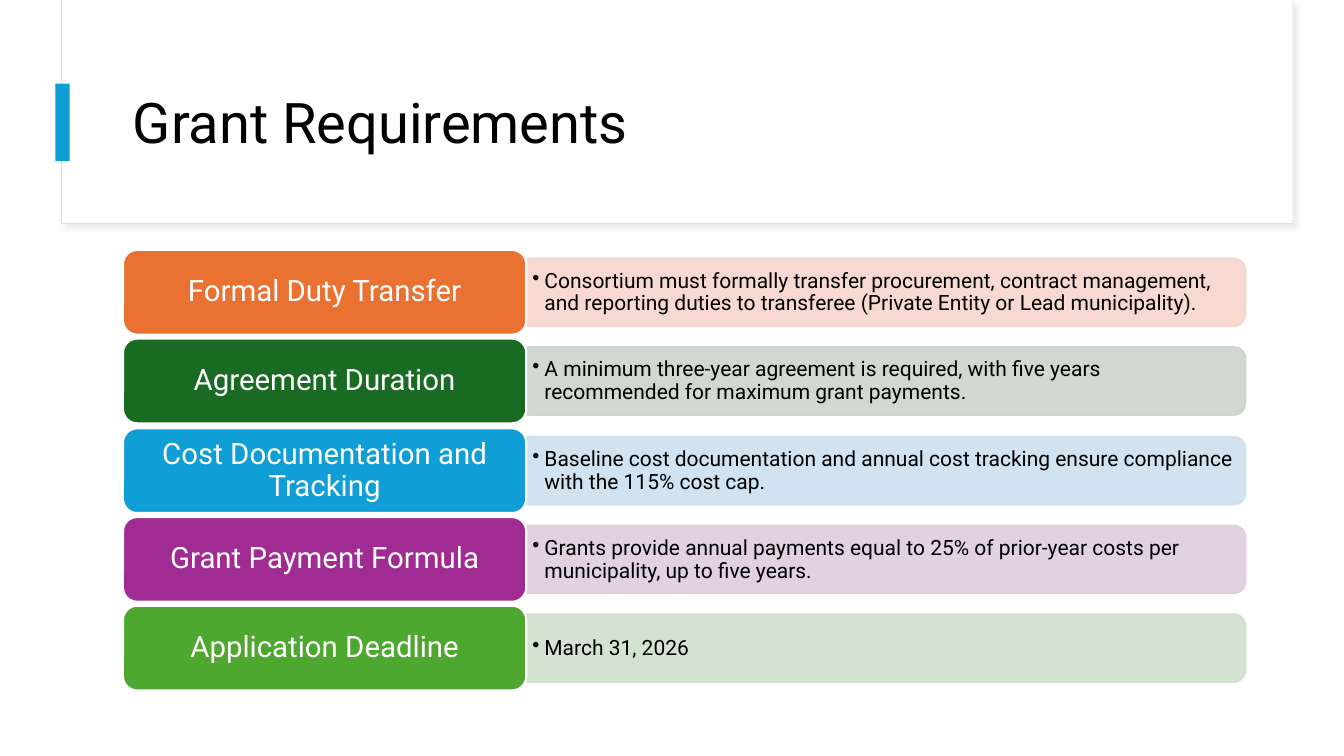
from lxml.etree import SubElement
from pptx import Presentation
from pptx.dml.color import RGBColor
from pptx.enum.shapes import MSO_SHAPE
from pptx.enum.text import MSO_ANCHOR, PP_ALIGN
from pptx.oxml.ns import qn
from pptx.util import Emu, Pt

FONT = "Roboto"
ROW_TOP, ROW_PITCH, ROW_HEIGHT = 248, 88.3, 84
LABEL_LEFT, LABEL_WIDTH = 122, 400
BAND_LEFT, BAND_WIDTH, BAND_HEIGHT = 523, 712, 67

REQUIREMENTS = [
    ("Formal Duty Transfer", "E97132", "F7D5CE",
     "Consortium must formally transfer procurement, contract management, "
     "and reporting duties to transferee (Private Entity or Lead municipality)."),
    ("Agreement Duration", "196B24", "CCD4CD",
     "A minimum three-year agreement is required, with five years "
     "recommended for maximum grant payments."),
    ("Cost Documentation and Tracking", "0F9ED5", "CCDFEF",
     "Baseline cost documentation and annual cost tracking ensure compliance "
     "with the 115% cost cap."),
    ("Grant Payment Formula", "A02B93", "DFCDDC",
     "Grants provide annual payments equal to 25% of prior-year costs per "
     "municipality, up to five years."),
    ("Application Deadline", "4EA72E", "D0E1CD", "March 31, 2026"),
]


def px(length):
    """Turn px, at 100 to the inch, into EMU."""
    return Emu(round(length * 9144))


def color(code):
    """Turn a hex string into a colour."""
    return RGBColor.from_string(code)


def add_block(slide, kind, box, fill, line=None, line_width=1.5):
    """Add a filled preset shape without a shadow."""
    shape = slide.shapes.add_shape(kind, *map(px, box))
    shape.shadow.inherit = False
    shape.fill.solid()
    shape.fill.fore_color.rgb = color(fill)
    if line:
        shape.line.color.rgb = color(line)
        shape.line.width = Pt(line_width)
    else:
        shape.line.fill.background()
    return shape


def write_text(shape, text, size, code, insets, align=PP_ALIGN.LEFT, bullet=False):
    """Write one paragraph, vertically centred, into a shape."""
    frame = shape.text_frame
    frame.word_wrap = True
    frame.vertical_anchor = MSO_ANCHOR.MIDDLE
    frame.margin_left = frame.margin_right = px(insets[0])
    frame.margin_top = frame.margin_bottom = px(insets[1])
    paragraph = frame.paragraphs[0]
    paragraph.alignment = align
    paragraph.line_spacing = 0.9
    if bullet:
        properties = paragraph._p.get_or_add_pPr()
        properties.set("marL", str(px(12)))
        properties.set("indent", str(px(-12)))
        SubElement(properties, qn("a:buChar"), char="•")
    run = paragraph.add_run()
    run.text = text
    run.font.name = FONT
    run.font.size = Pt(size)
    run.font.color.rgb = color(code)


def add_soft_shadow(shape):
    """Give a shape a faint shadow towards the lower right."""
    effects = shape.element.spPr.find(qn("a:effectLst"))
    shadow = SubElement(effects, qn("a:outerShdw"), blurRad=str(Pt(4)),
                        dist=str(Pt(3)), dir="2700000", algn="tl", rotWithShape="0")
    tint = SubElement(shadow, qn("a:srgbClr"), val="D9D9D9")
    SubElement(tint, qn("a:alpha"), val="50000")


def set_opacity(shape, percent):
    """Set the opacity of the fill and line of a shape."""
    for tint in shape.element.spPr.iter(qn("a:srgbClr")):
        SubElement(tint, qn("a:alpha"), val=str(percent * 1000))


def add_header(slide, title):
    """Add the title panel with its accent bar."""
    panel = add_block(slide, MSO_SHAPE.RECTANGLE, (61, 1, 1221, 221),
                      "FFFFFF", "DEDEDE", 0.75)
    add_soft_shadow(panel)
    add_block(slide, MSO_SHAPE.RECTANGLE, (62, 0, 1220, 220), "FFFFFF")
    heading = slide.shapes.add_textbox(px(122), px(60), px(1112), px(129))
    write_text(heading, title, 40, "000000", (10, 5))
    add_block(slide, MSO_SHAPE.RECTANGLE, (55, 83, 14, 77), "0F9ED5")


def add_requirement(slide, top, label, label_fill, band_fill, detail):
    """Add one row: a label block and a tinted band with its detail."""
    middle = top + ROW_HEIGHT / 2
    band_box = (BAND_LEFT + (BAND_WIDTH - BAND_HEIGHT) / 2, middle - BAND_WIDTH / 2,
                BAND_HEIGHT, BAND_WIDTH)
    band = add_block(slide, MSO_SHAPE.ROUND_2_SAME_RECTANGLE, band_box,
                     band_fill, band_fill)
    band.rotation = 90
    set_opacity(band, 90)
    note = slide.shapes.add_textbox(px(522), px(top + 12), px(708), px(61))
    write_text(note, detail, 15, "000000", (6, 3), bullet=True)
    block = add_block(slide, MSO_SHAPE.ROUNDED_RECTANGLE,
                      (LABEL_LEFT, top, LABEL_WIDTH, ROW_HEIGHT), label_fill, "FFFFFF")
    write_text(block, label, 21, "FFFFFF", (9, 4), PP_ALIGN.CENTER)


def main():
    """Build and save the slide."""
    presentation = Presentation()
    presentation.slide_width = px(1333)
    presentation.slide_height = px(750)
    slide = presentation.slides.add_slide(presentation.slide_layouts[6])
    add_header(slide, "Grant Requirements")
    for row, requirement in enumerate(REQUIREMENTS):
        add_requirement(slide, ROW_TOP + round(row * ROW_PITCH), *requirement)
    presentation.save("out.pptx")


if __name__ == "__main__":
    main()
